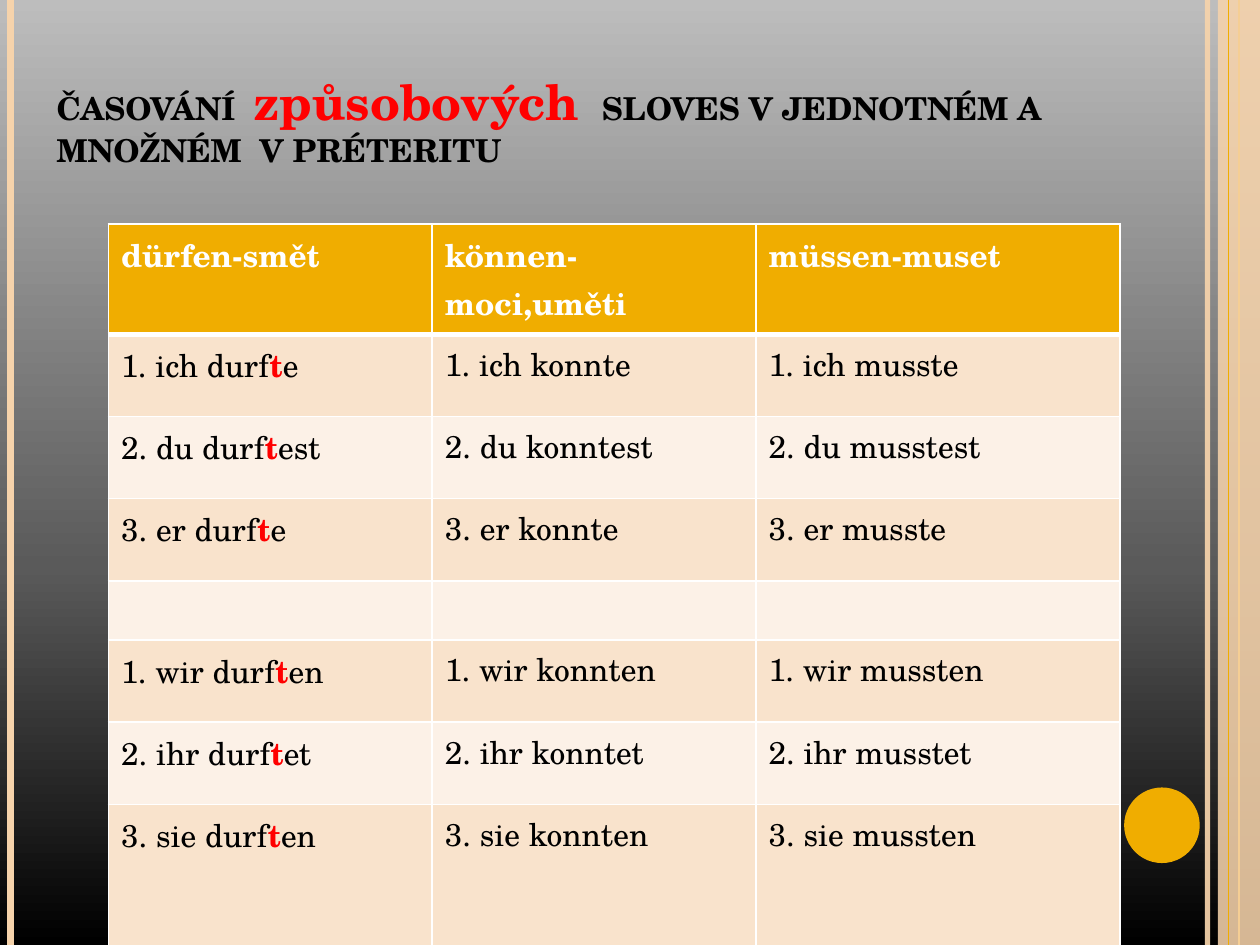
from copy import deepcopy

from lxml import etree
from pptx import Presentation
from pptx.dml.color import RGBColor
from pptx.enum import shapes, text
from pptx.oxml import ns
from pptx.util import Pt

FONT = "TeX Gyre Schola"
COLORS = {
    "ink": "000000", "accent": "FF0000", "gold": "F0AD00", "peach": "F6D3AB",
    "white": "FFFFFF", "band_dark": "F9E3CC", "band_light": "FCF1E7",
}
BACKGROUND_STOPS = [(0, "000000"), (0.4, "5A5A5A"), (1, "BDBDBD")]
VERBS = ["dürfen-smět", "können-moci,uměti", "müssen-muset"]
STEMS = ["durf", "konn", "muss"]
PERSONS = [
    ("1. ich", "e"), ("2. du", "est"), ("3. er", "e"), None,
    ("1. wir", "en"), ("2. ihr", "et"), ("3. sie", "en"),
]
COLUMN_WIDTHS = [185, 185, 208]
ROW_HEIGHTS = [63, 47, 47, 47, 33.7, 47, 47, 83]


def rgb(name):
    """Return the named colour."""
    return RGBColor.from_string(COLORS[name])


def add_run(paragraph, words, color, size=18, bold=True):
    """Append a formatted run to a paragraph."""
    run = paragraph.add_run()
    run.text = words
    run.font.name, run.font.size, run.font.bold = FONT, Pt(size), bold
    run.font.color.rgb = rgb(color)


def set_alpha(shape, percent):
    """Make the first solid colour of a shape partly transparent."""
    color = shape.element.spPr.find(".//" + ns.qn("a:srgbClr"))
    etree.SubElement(color, ns.qn("a:alpha"), val=str(percent * 1000))


def paint_background(slide):
    """Fill the slide with a gradient rising from black to grey."""
    fill = slide.background.fill
    fill.gradient()
    fill.gradient_angle = 90
    first = slide.element.find(".//" + ns.qn("a:gs"))
    first.addnext(deepcopy(first))
    for stop, (position, color) in zip(fill.gradient_stops, BACKGROUND_STOPS):
        stop.position = position
        stop.color.rgb = RGBColor.from_string(color)


def add_stripe(slide, x, height, color, width):
    """Draw a vertical stripe down the slide."""
    stripe = slide.shapes.add_connector(
        shapes.MSO_CONNECTOR.STRAIGHT, Pt(x), Pt(0), Pt(x), Pt(height))
    stripe.line.color.rgb = rgb(color)
    stripe.line.width = Pt(width)
    etree.SubElement(stripe.element.spPr, ns.qn("a:effectLst"))
    return stripe


def add_ornament(slide, kind, left, top, width, height, color):
    """Place a plain filled shape."""
    ornament = slide.shapes.add_shape(kind, Pt(left), Pt(top), Pt(width), Pt(height))
    ornament.shadow.inherit = False
    ornament.fill.solid()
    ornament.fill.fore_color.rgb = rgb(color)
    ornament.line.fill.background()
    return ornament


def add_frame(slide, width, height):
    """Decorate the slide edges with stripes, a side bar and a disc."""
    set_alpha(add_stripe(slide, width - 30, height, "peach", 3), 93)
    add_stripe(slide, 6, height, "peach", 4.5)
    add_stripe(slide, width - 12, height, "gold", 1.5)
    bar = add_ornament(slide, shapes.MSO_SHAPE.RECTANGLE, width - 24, 0, 24, height, "peach")
    set_alpha(bar, 87)
    add_stripe(slide, width - 18, height, "gold", 0.75)
    add_ornament(slide, shapes.MSO_SHAPE.OVAL, width - 77.6, height - 90, 43.2, 43.2, "gold")


def fill_title(slide, left, top, width, height):
    """Write the heading into the title placeholder."""
    title = slide.shapes.title
    title.left, title.top, title.width, title.height = map(Pt, (left, top, width, height))
    frame = title.text_frame
    frame.word_wrap = True
    frame.auto_size = text.MSO_AUTO_SIZE.SHAPE_TO_FIT_TEXT
    frame.vertical_anchor = text.MSO_ANCHOR.TOP
    heading = frame.paragraphs[0]
    heading.alignment = text.PP_ALIGN.LEFT
    add_run(heading, "ČASOVÁNÍ  ", "ink")
    add_run(heading, "způsobových ", "accent", 28)
    add_run(heading, " ", "accent")
    add_run(heading, "SLOVES V JEDNOTNÉM A MNOŽNÉM  V PRÉTERITU", "ink")


def style_cell(cell, color, bottom_width):
    """Give a cell its fill and white borders."""
    borders = {"a:lnL": 1, "a:lnR": 1, "a:lnT": 1, "a:lnB": bottom_width}
    properties = cell._tc.get_or_add_tcPr()
    for tag, width in borders.items():
        border = etree.SubElement(properties, ns.qn(tag), w=str(Pt(width)))
        solid = etree.SubElement(border, ns.qn("a:solidFill"))
        etree.SubElement(solid, ns.qn("a:srgbClr"), val=COLORS["white"])
    cell.fill.solid()
    cell.fill.fore_color.rgb = rgb(color)


def add_conjugation(slide, left, top):
    """Build the table of preterite forms, one verb per column."""
    table = slide.shapes.add_table(
        len(ROW_HEIGHTS), len(VERBS), Pt(left), Pt(top),
        Pt(sum(COLUMN_WIDTHS)), Pt(sum(ROW_HEIGHTS))).table
    for row, height in zip(table.rows, ROW_HEIGHTS):
        row.height = Pt(height)
    for c, (verb, stem, width) in enumerate(zip(VERBS, STEMS, COLUMN_WIDTHS)):
        table.columns[c].width = Pt(width)
        header = table.cell(0, c)
        style_cell(header, "gold", 3)
        add_run(header.text_frame.paragraphs[0], verb, "white")
        for r, person in enumerate(PERSONS, 1):
            cell = table.cell(r, c)
            style_cell(cell, "band_dark" if r % 2 else "band_light", 1)
            if person is None:
                continue
            pronoun, ending = person
            form = cell.text_frame.paragraphs[0]
            if c == 0:
                add_run(form, f"{pronoun} {stem}", "ink", bold=False)
                add_run(form, "t", "accent")
                add_run(form, ending, "ink", bold=False)
            else:
                add_run(form, f"{pronoun} {stem}t{ending}", "ink", bold=False)


def main():
    """Build and save the slide."""
    deck = Presentation()
    deck.slide_width, deck.slide_height = Pt(720), Pt(540)
    slide = deck.slides.add_slide(deck.slide_layouts[5])
    paint_background(slide)
    add_frame(slide, 720, 540)
    add_conjugation(slide, 62, 128)
    fill_title(slide, 25.2, 37.5, 655, 63.4)
    deck.save("out.pptx")


if __name__ == "__main__":
    main()
